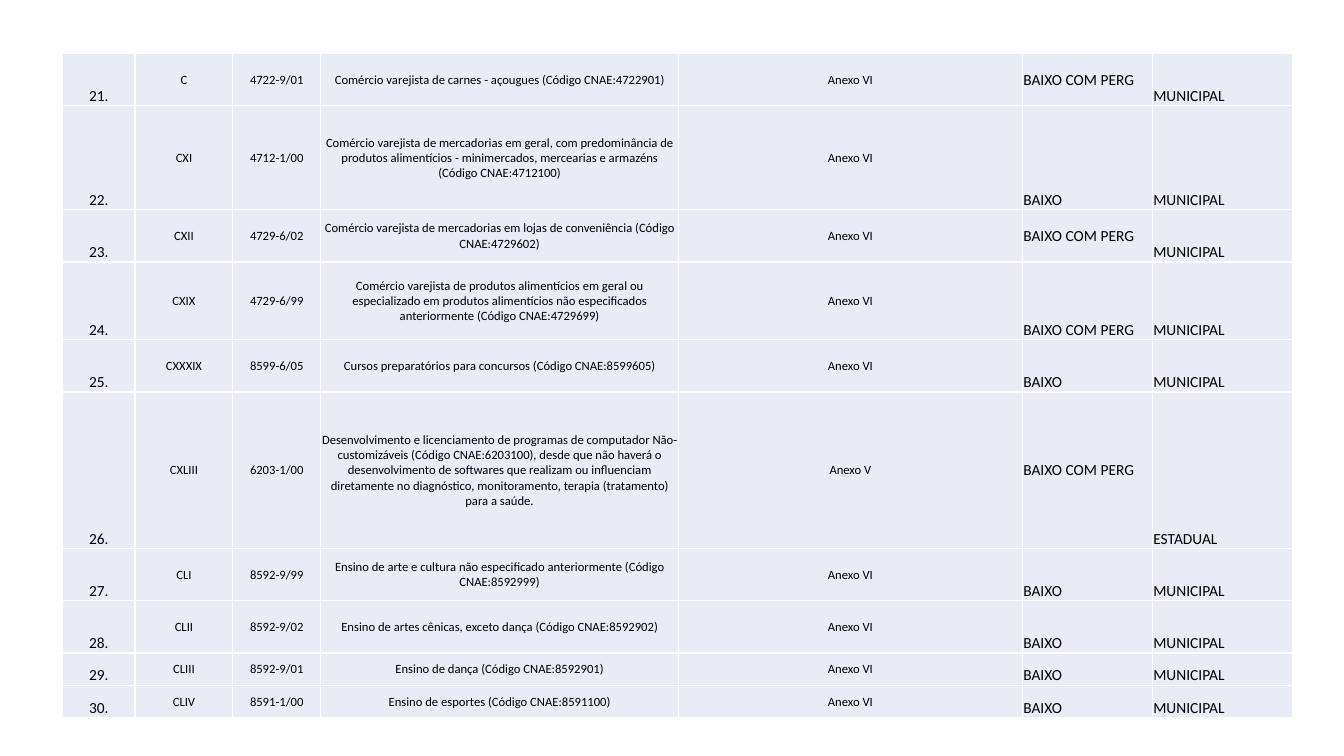
from lxml import etree
from pptx import Presentation
from pptx.dml.color import RGBColor
from pptx.enum.text import MSO_ANCHOR as Anchor, PP_ALIGN as Align
from pptx.oxml.ns import qn
from pptx.util import Inches, Pt

FIRST_NUMBER = 21
COLUMN_WIDTHS = [0.72, 0.97, 0.87, 3.55, 3.41, 1.29, 1.39]
LOW, LOW_ASKED = "BAIXO", "BAIXO COM PERG"
CITY, STATE = "MUNICIPAL", "ESTADUAL"

# Row height, item, CNAE code, activity, annex, risk, risk anchor, agency
ACTIVITIES = [
    (0.52, "C", "4722-9/01",
     "Comércio varejista de carnes - açougues (Código CNAE:4722901)",
     "Anexo VI", LOW_ASKED, Anchor.MIDDLE, CITY),
    (1.03, "CXI", "4712-1/00",
     "Comércio varejista de mercadorias em geral, com predominância de produtos "
     "alimentícios - minimercados, mercearias e armazéns (Código CNAE:4712100)",
     "Anexo VI", LOW, Anchor.BOTTOM, CITY),
    (0.52, "CXII", "4729-6/02",
     "Comércio varejista de mercadorias em lojas de conveniência (Código CNAE:4729602)",
     "Anexo VI", LOW_ASKED, Anchor.MIDDLE, CITY),
    (0.77, "CXIX", "4729-6/99",
     "Comércio varejista de produtos alimentícios em geral ou especializado em produtos "
     "alimentícios não especificados anteriormente (Código CNAE:4729699)",
     "Anexo VI", LOW_ASKED, Anchor.BOTTOM, CITY),
    (0.52, "CXXXIX", "8599-6/05",
     "Cursos preparatórios para concursos (Código CNAE:8599605)",
     "Anexo VI", LOW, Anchor.BOTTOM, CITY),
    (1.55, "CXLIII", "6203-1/00",
     "Desenvolvimento e licenciamento de programas de computador Não-customizáveis "
     "(Código CNAE:6203100), desde que não haverá o desenvolvimento de softwares que "
     "realizam ou influenciam diretamente no diagnóstico, monitoramento, terapia "
     "(tratamento) para a saúde.",
     "Anexo V", LOW_ASKED, Anchor.MIDDLE, STATE),
    (0.52, "CLI", "8592-9/99",
     "Ensino de arte e cultura não especificado anteriormente (Código CNAE:8592999)",
     "Anexo VI", LOW, Anchor.BOTTOM, CITY),
    (0.52, "CLII", "8592-9/02",
     "Ensino de artes cênicas, exceto dança (Código CNAE:8592902)",
     "Anexo VI", LOW, Anchor.BOTTOM, CITY),
    (0.32, "CLIII", "8592-9/01",
     "Ensino de dança (Código CNAE:8592901)",
     "Anexo VI", LOW, Anchor.BOTTOM, CITY),
    (0.32, "CLIV", "8591-1/00",
     "Ensino de esportes (Código CNAE:8591100)",
     "Anexo VI", LOW, Anchor.BOTTOM, CITY),
]


def color(hex_value):
    return RGBColor.from_string(hex_value)


class SlideBuilder:
    font = "Calibri"
    text_color = "000000"
    cell_fill = "E9EBF5"
    border_color = "FFFFFF"
    border_width = 1

    def __init__(self, slide):
        self.slide = slide

    def table(self, left, top, widths, heights):
        frame = self.slide.shapes.add_table(
            len(heights), len(widths), Inches(left), Inches(top),
            Inches(sum(widths)), Inches(sum(heights)))
        table = frame.table
        table.first_row = table.horz_banding = False
        for column, width in zip(table.columns, widths):
            column.width = Inches(width)
        for row, height in zip(table.rows, heights):
            row.height = Inches(height)
        return table

    def cell(self, cell, text, size, align, anchor):
        cell.margin_left = cell.margin_top = cell.margin_right = Inches(0.01)
        cell.margin_bottom = Inches(0)
        cell.vertical_anchor = anchor
        self.borders(cell)
        cell.fill.solid()
        cell.fill.fore_color.rgb = color(self.cell_fill)
        paragraph = cell.text_frame.paragraphs[0]
        paragraph.alignment = align
        run = paragraph.add_run()
        run.text = text
        run.font.name = self.font
        run.font.size = Pt(size)
        run.font.color.rgb = color(self.text_color)

    def borders(self, cell):
        properties = cell._tc.get_or_add_tcPr()
        for side in ("a:lnL", "a:lnR", "a:lnT", "a:lnB"):
            line = etree.SubElement(properties, qn(side), w=str(Pt(self.border_width)))
            fill = etree.SubElement(line, qn("a:solidFill"))
            etree.SubElement(fill, qn("a:srgbClr"), val=self.border_color)


def main():
    presentation = Presentation()
    presentation.slide_width = Inches(13.33)
    presentation.slide_height = Inches(7.5)
    blank_layout = presentation.slide_layouts[6]
    builder = SlideBuilder(presentation.slides.add_slide(blank_layout))

    # Table grid
    heights = [activity[0] for activity in ACTIVITIES]
    table = builder.table(0.62, 0.53, COLUMN_WIDTHS, heights)

    # Table rows: number, four small centred columns, risk and agency
    for index, activity in enumerate(ACTIVITIES):
        _, *details, risk, risk_anchor, agency = activity
        entries = [(f"{FIRST_NUMBER + index}.", 11, Align.CENTER, Anchor.BOTTOM)]
        entries += [(detail, 9, Align.CENTER, Anchor.MIDDLE) for detail in details]
        entries += [(risk, 11, Align.LEFT, risk_anchor),
                    (agency, 11, Align.LEFT, Anchor.BOTTOM)]
        for column, entry in enumerate(entries):
            builder.cell(table.cell(index, column), *entry)

    presentation.save("out.pptx")


if __name__ == "__main__":
    main()
